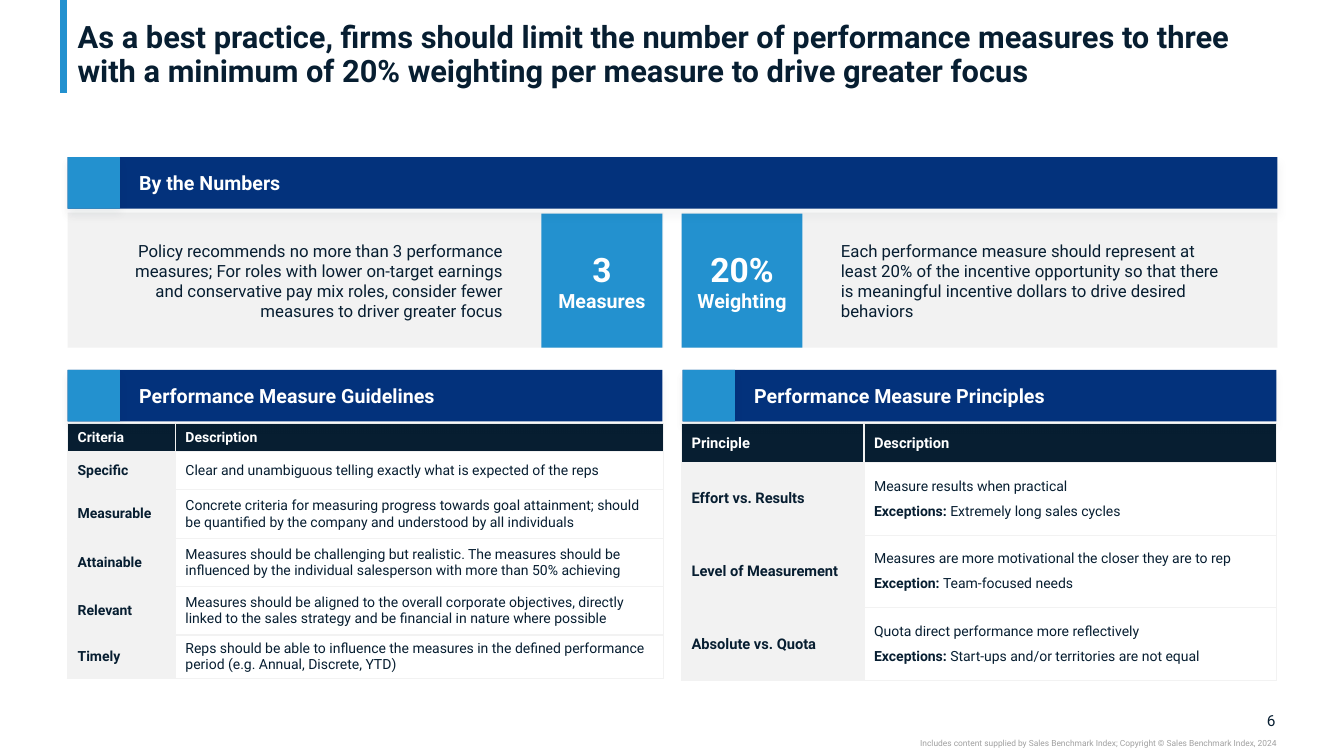
from dataclasses import dataclass

from lxml import etree
from pptx import Presentation
from pptx import util as u
from pptx.dml.color import RGBColor
from pptx.enum import shapes, text
from pptx.oxml import ns


@dataclass(frozen=True)
class Theme:
    font: str = "Roboto"
    ink: str = "071E31"
    navy: str = "03327C"
    blue: str = "2391CF"
    pale: str = "F2F2F2"
    white: str = "FFFFFF"
    grey: str = "A0A0A0"
    title: float = 22
    figure: float = 24
    heading: float = 14
    body: float = 12
    number: float = 11
    label: float = 10.5
    table: float = 10
    footer: float = 6


THEME = Theme()
LEFT, RIGHT = text.PP_ALIGN.LEFT, text.PP_ALIGN.RIGHT
CENTER = text.PP_ALIGN.CENTER
MIDDLE = text.MSO_ANCHOR.MIDDLE
COLUMN_LEFTS = (0.67, 6.76)
COLUMN_WIDTH = 5.91

GUIDELINES = [
    ("Criteria", "Description"),
    ("Specific", "Clear and unambiguous telling exactly what is expected of the reps"),
    ("Measurable", "Concrete criteria for measuring progress towards goal attainment; "
     "should be quantified by the company and understood by all individuals"),
    ("Attainable", "Measures should be challenging but realistic. The measures should be "
     "influenced by the individual salesperson with more than 50% achieving"),
    ("Relevant", "Measures should be aligned to the overall corporate objectives, directly "
     "linked to the sales strategy and be financial in nature where possible"),
    ("Timely", "Reps should be able to influence the measures in the defined performance "
     "period (e.g. Annual, Discrete, YTD)"),
]
# Each principle: name, rule, exception label, exception
PRINCIPLES = [
    ("Effort vs. Results", "Measure results when practical",
     "Exceptions: ", "Extremely long sales cycles"),
    ("Level of Measurement", "Measures are more motivational the closer they are to rep",
     "Exception: ", "Team-focused needs"),
    ("Absolute vs. Quota", "Quota direct performance more reflectively",
     "Exceptions: ", "Start-ups and/or territories are not equal"),
]


def inches(*values):
    return [u.Inches(value) for value in values]


def style_runs(paragraph, size, color, bold=False):
    for run in paragraph.runs:
        run.font.name = THEME.font
        run.font.size = u.Pt(size)
        run.font.bold = bold
        run.font.color.rgb = RGBColor.from_string(color)


def clear_margins(frame, left=0, right=0):
    frame.margin_left, frame.margin_right = inches(left, right)
    frame.margin_top = frame.margin_bottom = 0
    frame.word_wrap = True


def add_text(slide, box, words, size, color, align=LEFT, anchor=MIDDLE):
    frame = slide.shapes.add_textbox(*inches(*box)).text_frame
    clear_margins(frame)
    frame.vertical_anchor = anchor
    frame.text = words
    frame.paragraphs[0].alignment = align
    style_runs(frame.paragraphs[0], size, color)


def add_block(slide, box, color):
    shape = slide.shapes.add_shape(shapes.MSO_SHAPE.RECTANGLE, *inches(*box))
    shape.shadow.inherit = False
    shape.fill.solid()
    shape.fill.fore_color.rgb = RGBColor.from_string(color)
    shape.line.fill.background()
    clear_margins(shape.text_frame)
    shape.text_frame.vertical_anchor = MIDDLE
    return shape


def add_soft_shadow(shape):
    effects = shape._element.spPr.find(ns.qn("a:effectLst"))
    shadow = etree.SubElement(effects, ns.qn("a:outerShdw"), blurRad=str(u.Pt(6)),
                              dist=str(u.Pt(4)), dir="5400000", algn="t", rotWithShape="0")
    color = etree.SubElement(shadow, ns.qn("a:srgbClr"), val=THEME.ink)
    etree.SubElement(color, ns.qn("a:alpha"), val="4000")


def add_banner(slide, left, top, width, words):
    banner = add_block(slide, (left, top, width, 0.51), THEME.navy)
    clear_margins(banner.text_frame, left=0.71)
    banner.text_frame.text = words
    banner.text_frame.paragraphs[0].alignment = LEFT
    style_runs(banner.text_frame.paragraphs[0], THEME.heading, THEME.white, True)
    accent = add_block(slide, (left, top, 0.52, 0.51), THEME.blue)
    for shape in (banner, accent):
        add_soft_shadow(shape)


def add_number_card(slide, left, tile_left, text_left, align, figure, unit, words):
    add_block(slide, (left, 2.11, COLUMN_WIDTH, 1.34), THEME.pale)
    add_text(slide, (text_left, 2.38, 3.76, 0.81), words, THEME.body, THEME.ink, align)
    frame = add_block(slide, (tile_left, 2.12, 1.2, 1.33), THEME.blue).text_frame
    frame.text = f"{figure}\n{unit}"
    for paragraph, size in zip(frame.paragraphs, (THEME.figure, THEME.heading)):
        paragraph.alignment = CENTER
        style_runs(paragraph, size, THEME.white, True)


def format_cell(cell, fill):
    cell.vertical_anchor = MIDDLE
    cell.fill.solid()
    cell.fill.fore_color.rgb = RGBColor.from_string(fill)
    properties = cell._tc.get_or_add_tcPr()
    for index, side in enumerate(("lnL", "lnR", "lnT", "lnB")):
        border = etree.Element(ns.qn(f"a:{side}"), w=str(u.Pt(1)))
        paint = etree.SubElement(border, ns.qn("a:solidFill"))
        etree.SubElement(paint, ns.qn("a:srgbClr"), val=THEME.pale)
        properties.insert(index, border)


def add_grid(slide, left, widths, heights, rows, label_size):
    frame = slide.shapes.add_table(len(rows), len(widths),
                                   *inches(left, 4.2, sum(widths), sum(heights)))
    table = frame.table
    table.first_row = table.horz_banding = False
    for column, width in zip(table.columns, widths):
        column.width = u.Inches(width)
    for row, height in zip(table.rows, heights):
        row.height = u.Inches(height)
    for row_index, row in enumerate(rows):
        for column_index, words in enumerate(row):
            header, label = row_index == 0, column_index == 0
            cell = table.cell(row_index, column_index)
            cell.text = words
            format_cell(cell, THEME.ink if header else THEME.pale if label else THEME.white)
            style_runs(cell.text_frame.paragraphs[0],
                       label_size if header or label else THEME.table,
                       THEME.white if header else THEME.ink, header or label)
    return table


def add_exception(cell, label, words):
    rule = cell.text_frame.paragraphs[0]
    exception = cell.text_frame.add_paragraph()
    exception.text = label
    exception.add_run().text = words
    style_runs(exception, THEME.table, THEME.ink)
    exception.runs[0].font.bold = True
    exception.space_before = rule.space_after = exception.space_after = u.Pt(3)


def add_title(slide, words):
    title = slide.shapes.title
    title.left, title.top, title.width, title.height = inches(0.67, 0.04, 11.99, 0.84)
    frame = title.text_frame
    clear_margins(frame, left=0.1, right=0.1)
    frame.vertical_anchor = text.MSO_ANCHOR.BOTTOM
    frame.auto_size = text.MSO_AUTO_SIZE.NONE
    frame.text = words
    frame.paragraphs[0].alignment = LEFT
    frame.paragraphs[0].line_spacing = 0.9
    style_runs(frame.paragraphs[0], THEME.title, THEME.ink, True)


def add_title_rule(slide):
    rule = slide.shapes.add_connector(shapes.MSO_CONNECTOR.STRAIGHT,
                                      *inches(0.63, 0, 0.63, 0.92))
    rule.line.color.rgb = RGBColor.from_string(THEME.blue)
    rule.line.width = u.Pt(5)
    etree.SubElement(rule._element.spPr, ns.qn("a:effectLst"))


def main():
    presentation = Presentation()
    presentation.slide_width, presentation.slide_height = inches(13.33, 7.5)
    slide = presentation.slides.add_slide(presentation.slide_layouts[5])
    first, second = COLUMN_LEFTS

    # Title and footer
    add_title_rule(slide)
    add_title(slide, "As a best practice, firms should limit the number of performance measures "
              "to three with a minimum of 20% weighting per measure to drive greater focus")
    add_text(slide, (12.32, 7.05, 0.33, 0.19), "6", THEME.number, THEME.ink, RIGHT)
    add_text(slide, (7.5, 7.32, 5.16, 0.1), "Includes content supplied by Sales Benchmark Index; "
             "Copyright © Sales Benchmark Index, 2024", THEME.footer, THEME.grey, RIGHT,
             text.MSO_ANCHOR.TOP)

    # Key numbers
    add_number_card(slide, first, 5.37, 1.23, RIGHT, "3", "Measures",
                    "Policy recommends no more than 3 performance measures; For roles with lower "
                    "on-target earnings and conservative pay mix roles, consider fewer measures "
                    "to driver greater focus")
    add_number_card(slide, second, second, 8.34, LEFT, "20%", "Weighting",
                    "Each performance measure should represent at least 20% of the incentive "
                    "opportunity so that there is meaningful incentive dollars to drive desired "
                    "behaviors")
    add_banner(slide, first, 1.56, 12, "By the Numbers")

    # Tables
    add_grid(slide, first, (1.07, 4.84), (0.28, 0.38, 0.48, 0.48, 0.48, 0.38),
             GUIDELINES, THEME.table)
    rows = [("Principle", "Description")] + [principle[:2] for principle in PRINCIPLES]
    principles = add_grid(slide, second, (1.81, 4.09), (0.39, 0.72, 0.72, 0.72),
                          rows, THEME.label)
    for row_index, (_, _, label, words) in enumerate(PRINCIPLES, start=1):
        add_exception(principles.cell(row_index, 1), label, words)
    add_banner(slide, first, 3.67, 5.9, "Performance Measure Guidelines")
    add_banner(slide, second + 0.01, 3.67, 5.89, "Performance Measure Principles")

    presentation.save("out.pptx")


if __name__ == "__main__":
    main()
